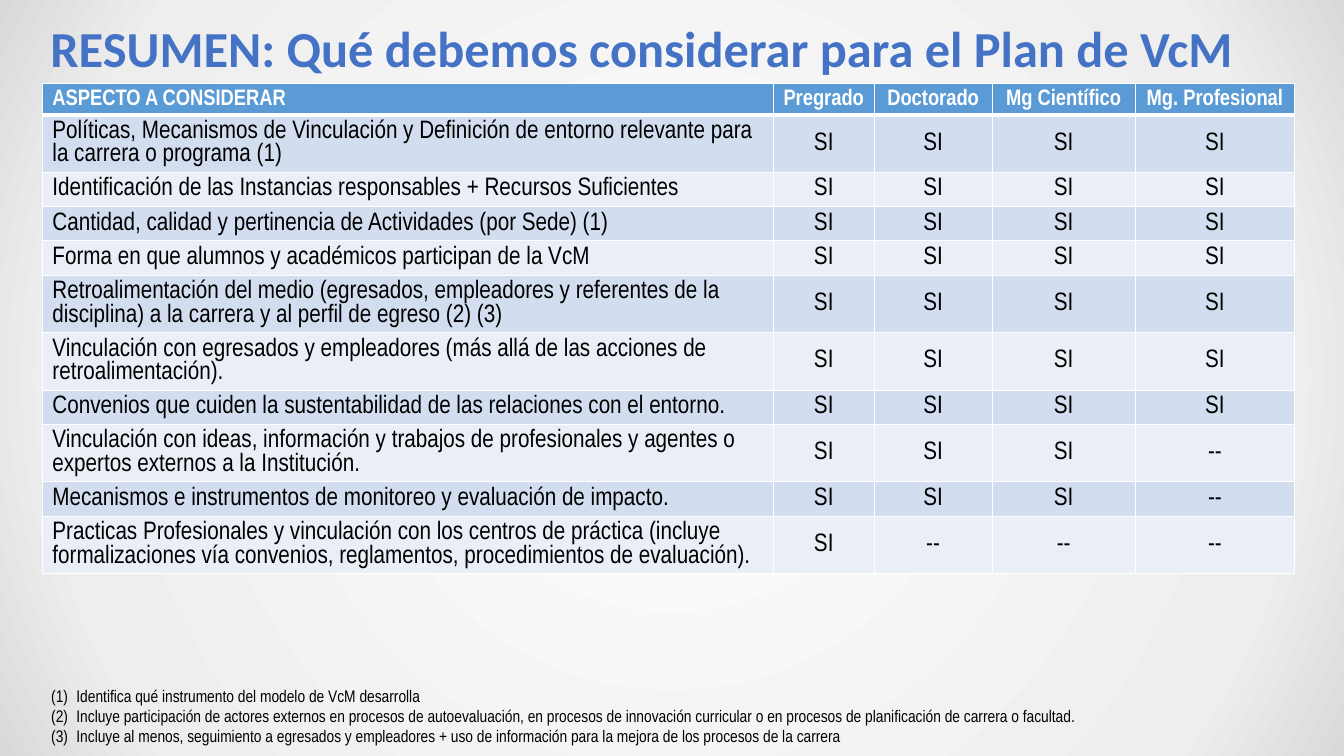
from dataclasses import dataclass

from pptx import Presentation
from pptx.dml.color import RGBColor
from pptx.enum.text import MSO_ANCHOR, MSO_AUTO_SIZE, PP_ALIGN
from pptx.oxml import parse_xml
from pptx.oxml.ns import nsdecls
from pptx.util import Inches, Pt

NARROW = "Arial Narrow"
WHITE, BLACK, TITLE_BLUE, HEADER_BLUE = "FFFFFF", "000000", "4472C4", "5B9BD5"
BANDS = ("D2DEEF", "EAEFF7")
COLUMN_WIDTHS = (7.25, 1, 1.17, 1.42, 1.58)
HEADER_HEIGHT, ONE_LINE, TWO_LINES = 0.31, 0.34, 0.57
HEADERS = ("ASPECTO A CONSIDERAR", "Pregrado", "Doctorado", "Mg Científico", "Mg. Profesional")
BACKGROUND_STOPS = ((0, "FFFFFF"), (81, "EEEEEE"), (100, "D9D9D9"))


@dataclass
class Aspect:
    text: str
    height: float
    programs: int = 4

    def values(self) -> list[str]:
        return [self.text] + ["SI"] * self.programs + ["--"] * (4 - self.programs)


ASPECTS = (
    Aspect("Políticas, Mecanismos de Vinculación y Definición de entorno relevante para "
           "la carrera o programa (1)", TWO_LINES),
    Aspect("Identificación de las Instancias responsables + Recursos Suficientes", ONE_LINE),
    Aspect("Cantidad, calidad y pertinencia de Actividades (por Sede) (1)", ONE_LINE),
    Aspect("Forma en que alumnos y académicos participan de la VcM", ONE_LINE),
    Aspect("Retroalimentación del medio (egresados, empleadores y referentes de la "
           "disciplina) a la carrera y al perfil de egreso (2) (3)", TWO_LINES),
    Aspect("Vinculación con egresados y empleadores (más allá de las acciones de "
           "retroalimentación).", TWO_LINES),
    Aspect("Convenios que cuiden la sustentabilidad de las relaciones con el entorno.", ONE_LINE),
    Aspect("Vinculación con ideas, información y trabajos de profesionales y agentes o "
           "expertos externos a la Institución.", TWO_LINES, 3),
    Aspect("Mecanismos e instrumentos de monitoreo y evaluación de impacto.", ONE_LINE, 3),
    Aspect("Practicas Profesionales y vinculación con los centros de práctica (incluye "
           "formalizaciones vía convenios, reglamentos, procedimientos de evaluación).",
           TWO_LINES, 1),
)
NOTES = (
    "Identifica qué instrumento del modelo de VcM desarrolla",
    "Incluye participación de actores externos en procesos de autoevaluación, en procesos de "
    "innovación curricular o en procesos de planificación de carrera o facultad.",
    "Incluye al menos, seguimiento a egresados y empleadores + uso de información para la "
    "mejora de los procesos de la carrera",
)


def rgb(color: str) -> RGBColor:
    return RGBColor.from_string(color)


def add_run(p, text: str, size: float, color: str, font: str = NARROW, bold: bool = False) -> None:
    r = p.add_run()
    r.text = text
    r.font.name, r.font.size, r.font.bold = font, Pt(size), bold
    r.font.color.rgb = rgb(color)


def set_background(s) -> None:
    stops = "".join(f'<a:gs pos="{pos * 1000}"><a:srgbClr val="{color}"/></a:gs>'
                    for pos, color in BACKGROUND_STOPS)
    s._element.cSld.insert(0, parse_xml(
        f'<p:bg {nsdecls("p", "a")}><p:bgPr><a:gradFill rotWithShape="1"><a:gsLst>{stops}</a:gsLst>'
        '<a:path path="circle"><a:fillToRect l="50000" t="50000" r="50000" b="50000"/></a:path>'
        '</a:gradFill><a:effectLst/></p:bgPr></p:bg>'))


def set_title(s) -> None:
    sp = s.shapes.title
    sp.left, sp.top, sp.width, sp.height = Inches(0.5), Inches(0.08), Inches(12), Inches(0.78)
    tf = sp.text_frame
    tf.word_wrap, tf.auto_size = True, MSO_AUTO_SIZE.NONE
    tf.vertical_anchor = MSO_ANCHOR.MIDDLE
    tf.margin_left = tf.margin_right = 0
    tf.margin_top = tf.margin_bottom = Inches(0.07)
    p = tf.paragraphs[0]
    p.alignment = PP_ALIGN.LEFT
    add_run(p, "RESUMEN: Qué debemos considerar para el Plan de VcM", 36, TITLE_BLUE, "Calibri", True)


def set_borders(cell, bottom: float) -> None:
    tcPr = cell._tc.get_or_add_tcPr()
    for side, width in (("L", 1), ("R", 1), ("T", 1), ("B", bottom)):
        tcPr.append(parse_xml(
            f'<a:ln{side} {nsdecls("a")} w="{Pt(width)}"><a:solidFill><a:srgbClr val="{WHITE}"/>'
            f'</a:solidFill></a:ln{side}>'))


def fill_row(table, row: int, values: list[str], height: float) -> None:
    header = row == 0
    table.rows[row].height = Inches(height)
    for col, text in enumerate(values):
        cell = table.cell(row, col)
        set_borders(cell, 3 if header else 1)
        cell.fill.solid()
        cell.fill.fore_color.rgb = rgb(HEADER_BLUE if header else BANDS[(row - 1) % 2])
        cell.vertical_anchor = MSO_ANCHOR.MIDDLE
        p = cell.text_frame.paragraphs[0]
        p.alignment = PP_ALIGN.CENTER if col else PP_ALIGN.LEFT
        add_run(p, text, 16 if header else 18, WHITE if header else BLACK, bold=header)


def add_aspects_table(s) -> None:
    height = HEADER_HEIGHT + sum(aspect.height for aspect in ASPECTS)
    table = s.shapes.add_table(len(ASPECTS) + 1, len(HEADERS), Inches(0.42), Inches(0.83),
                               Inches(sum(COLUMN_WIDTHS)), Inches(height)).table
    for column, width in zip(table.columns, COLUMN_WIDTHS):
        column.width = Inches(width)
    fill_row(table, 0, list(HEADERS), HEADER_HEIGHT)
    for row, aspect in enumerate(ASPECTS, 1):
        fill_row(table, row, aspect.values(), aspect.height)


def add_notes(s) -> None:
    tf = s.shapes.add_textbox(Inches(0.41), Inches(6.75), Inches(10.47), Inches(0.71)).text_frame
    tf.word_wrap, tf.auto_size = False, MSO_AUTO_SIZE.SHAPE_TO_FIT_TEXT
    for i, note in enumerate(NOTES):
        p = tf.add_paragraph() if i else tf.paragraphs[0]
        pPr = p._p.get_or_add_pPr()
        pPr.set("marL", str(Inches(0.25)))
        pPr.set("indent", str(Inches(-0.25)))
        pPr.append(parse_xml(f'<a:buFont {nsdecls("a")} typeface="+mj-lt"/>'))
        pPr.append(parse_xml(f'<a:buAutoNum {nsdecls("a")} type="arabicParenBoth"/>'))
        add_run(p, note, 12, BLACK)


def main() -> None:
    """Build the summary slide and save it."""
    prs = Presentation()
    prs.slide_width, prs.slide_height = Inches(13.33), Inches(7.5)
    s = prs.slides.add_slide(prs.slide_layouts[5])
    set_background(s)
    set_title(s)
    add_aspects_table(s)
    add_notes(s)
    prs.save("out.pptx")


if __name__ == "__main__":
    main()
